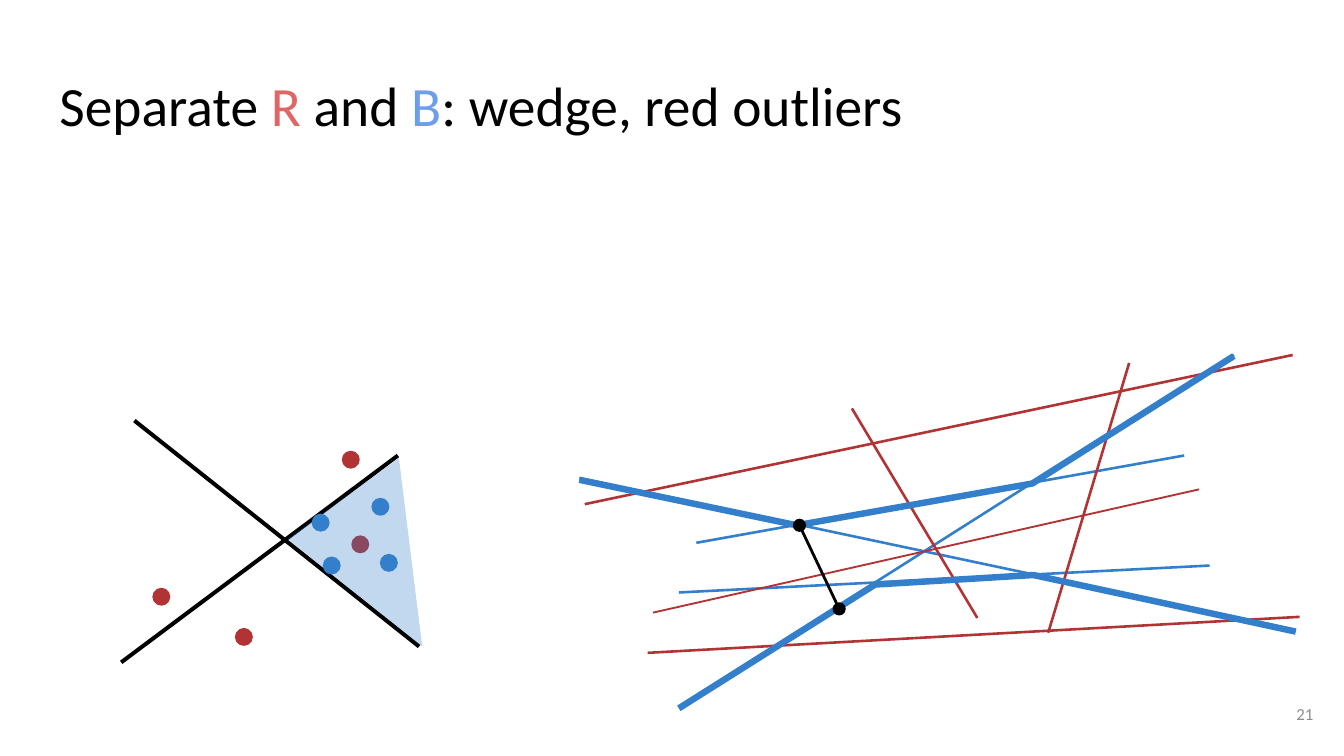
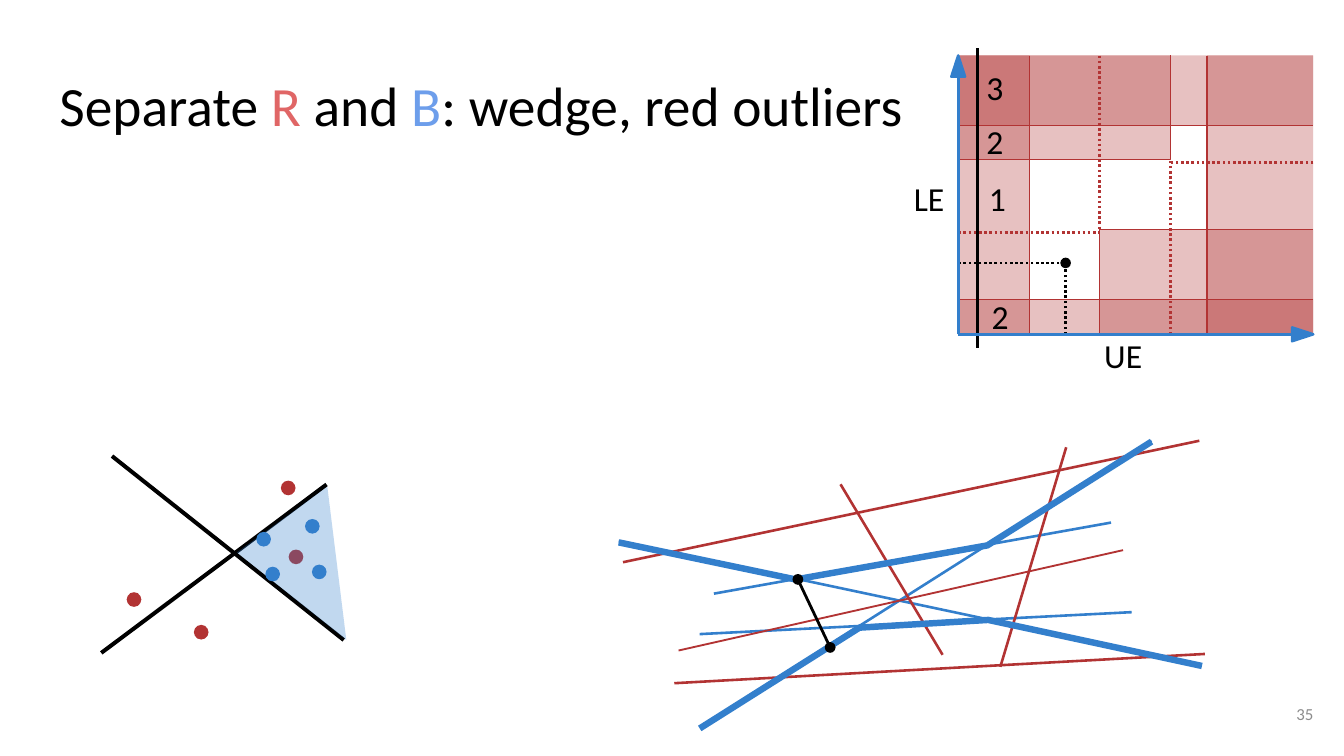
"""Build two slides on separating red and blue points with a wedge."""
from itertools import product

from lxml.etree import SubElement
from pptx import Presentation
from pptx.dml.color import RGBColor
from pptx.enum.dml import MSO_LINE
from pptx.enum.shapes import MSO_CONNECTOR, MSO_SHAPE
from pptx.enum.text import MSO_ANCHOR, MSO_AUTO_SIZE, PP_ALIGN
from pptx.oxml.ns import qn
from pptx.util import Cm, Pt

FONT = "Calibri"
COLORS = {
    "black": "000000",
    "blue": "337FCC",
    "red": "B23333",
    "title red": "E06666",
    "title blue": "6D9EEB",
    "grey": "8C8C8C",
}
RGB = {name: RGBColor.from_string(value) for name, value in COLORS.items()}

TITLE = [
    ("Separate ", "black"),
    ("R", "title red"),
    (" and ", "black"),
    ("B", "title blue"),
    (": wedge, red outliers", "black"),
]

WEDGE_LINES = [
    [(2.54, 7.95), (7.92, 12.22)],
    [(2.29, 12.52), (7.52, 8.61)],
]
WEDGE = [(5.44, 10.19), (7.54, 8.66), (7.98, 12.22)]
POINTS = {
    "blue": [(6.27, 10.69), (7.35, 10.64), (6.06, 9.88), (7.19, 9.58)],
    "red": [(3.05, 11.28), (4.61, 12.04), (6.81, 10.29), (6.63, 8.69)],
}

DUAL_LINES = [
    ("blue", 1.38, [(13.16, 10.26), (22.38, 8.61)]),
    ("blue", 1.38, [(10.95, 9.04), (24.49, 11.91)]),
    ("blue", 1.38, [(23.32, 6.71), (12.83, 13.36)]),
    ("blue", 1.38, [(12.83, 11.2), (22.86, 10.69)]),
    ("red", 1.38, [(11.05, 9.53), (24.43, 6.71)]),
    ("red", 1.38, [(12.24, 12.34), (24.56, 11.66)]),
    ("red", 1.38, [(16.1, 7.72), (18.47, 11.68)]),
    ("red", 1, [(12.34, 11.58), (22.66, 9.25)]),
    ("red", 1.38, [(21.34, 6.86), (19.81, 11.96)]),
    ("blue", 3.46, [(12.83, 13.39), (16.54, 11.05), (19.53, 10.87), (24.49, 11.94)]),
    ("blue", 3.46, [(10.95, 9.07), (15.06, 9.93), (19.51, 9.14), (23.32, 6.73)]),
]
SEGMENT = [(15.11, 9.93), (15.86, 11.51)]

SLIDES = [
    {"number": "21", "scale": 1, "wedge": (0, 0), "dual": (0, 0)},
    {"number": "35", "scale": 0.814, "wedge": (0.05, 2.15), "dual": (2.78, 2.87)},
]


def paint(shape, fill=None, line=None, width=1.38, opacity=100, dotted=False):
    if fill:
        shape.fill.solid()
        shape.fill.fore_color.rgb = RGB[fill]
        if opacity < 100:
            color = shape._element.spPr.find(qn("a:solidFill"))[0]
            SubElement(color, qn("a:alpha"), val=str(opacity * 1000))
    elif hasattr(shape, "fill"):
        shape.fill.background()
    if line:
        shape.line.color.rgb = RGB[line]
        shape.line.width = Pt(width)
        if dotted:
            shape.line.dash_style = MSO_LINE.ROUND_DOT
    else:
        shape.line.fill.background()
    SubElement(shape._element.spPr, qn("a:effectLst"))


def draw_path(slide, points, **style):
    corners = [(Cm(x), Cm(y)) for x, y in points]
    if len(corners) == 2:
        shape = slide.shapes.add_connector(MSO_CONNECTOR.STRAIGHT, *corners[0], *corners[1])
    else:
        builder = slide.shapes.build_freeform(*corners[0])
        builder.add_line_segments(corners[1:], close="fill" in style)
        shape = builder.convert_to_shape()
    paint(shape, **style)


presentation = Presentation()
presentation.slide_width = Cm(25.4)
presentation.slide_height = Cm(14.29)

for settings in SLIDES:
    slide = presentation.slides.add_slide(presentation.slide_layouts[5])
    title = slide.shapes.title
    title.left, title.top, title.width, title.height = Cm(0.87), Cm(1.25), Cm(23.67), Cm(1.59)
    title.text_frame.auto_size = MSO_AUTO_SIZE.NONE
    title.text_frame.vertical_anchor = MSO_ANCHOR.MIDDLE
    paragraph = title.text_frame.paragraphs[0]
    paragraph.alignment = PP_ALIGN.LEFT
    paragraph.line_spacing = 0.9
    for text, color in TITLE:
        run = paragraph.add_run()
        run.text = text
        run.font.name = FONT
        run.font.size = Pt(29.7)
        run.font.color.rgb = RGB[color]

    scale = settings["scale"]
    wedge_x, wedge_y = settings["wedge"]
    dual_x, dual_y = settings["dual"]
    wedge_lines = [[(x * scale + wedge_x, y * scale + wedge_y) for x, y in line] for line in WEDGE_LINES]
    wedge = [(x * scale + wedge_x, y * scale + wedge_y) for x, y in WEDGE]
    segment = [(x * scale + dual_x, y * scale + dual_y) for x, y in SEGMENT]
    dots = [
        (x * scale + wedge_x, y * scale + wedge_y, 0.34 * scale, color)
        for color, points in POINTS.items()
        for x, y in points
    ]
    end_dots = [(x, y, 0.25 * scale, "black") for x, y in segment]
    if settings["number"] == "35":
        end_dots.append((20.14, 4.97, 0.2, "black"))

    for line in wedge_lines:
        draw_path(slide, line, line="black", width=2.16)
    for color, width, points in DUAL_LINES:
        placed = [(x * scale + dual_x, y * scale + dual_y) for x, y in points]
        draw_path(slide, placed, line=color, width=width)
    draw_path(slide, segment, line="black", width=1.5)
    for x, y, size, color in dots + end_dots:
        dot = slide.shapes.add_shape(
            MSO_SHAPE.OVAL, Cm(x - size / 2), Cm(y - size / 2), Cm(size), Cm(size)
        )
        paint(dot, fill=color)
    draw_path(slide, wedge, fill="blue", opacity=30)

    box = slide.shapes.add_textbox(Cm(23.55), Cm(12.95), Cm(1.52), Cm(1.09))
    box.text_frame.word_wrap = True
    box.text_frame.vertical_anchor = MSO_ANCHOR.MIDDLE
    box.text_frame.text = settings["number"]
    paragraph = box.text_frame.paragraphs[0]
    paragraph.alignment = PP_ALIGN.RIGHT
    paragraph.runs[0].font.name = FONT
    paragraph.runs[0].font.size = Pt(9)
    paragraph.runs[0].font.color.rgb = RGB["grey"]

LEFT, RIGHT, TOP, BOTTOM = 18.11, 24.82, 1.05, 6.32
X1, X2, X3, X4 = 19.46, 20.78, 22.12, 22.81
Y1, Y2, Y3, Y4 = 2.37, 3.02, 4.34, 5.66

FORBIDDEN = [
    (LEFT, TOP, X1, BOTTOM),
    (X4, TOP, RIGHT, BOTTOM),
    (LEFT, TOP, RIGHT, Y1),
    (LEFT, Y4, RIGHT, BOTTOM),
    (X2, Y3, RIGHT, BOTTOM),
    (LEFT, TOP, X3, Y2),
]
for left, top, right, bottom in FORBIDDEN:
    region = slide.shapes.add_shape(
        MSO_SHAPE.RECTANGLE, Cm(left), Cm(top), Cm(right - left), Cm(bottom - top)
    )
    paint(region, fill="red", opacity=30)

BORDERS = [
    [(X1, TOP), (X1, BOTTOM)],
    [(X4, TOP), (X4, BOTTOM)],
    [(LEFT, Y1), (RIGHT, Y1)],
    [(LEFT, Y4), (RIGHT, Y4)],
    [(X2, BOTTOM), (X2, Y3), (RIGHT, Y3)],
    [(X3, TOP), (X3, Y2), (LEFT, Y2)],
]
for points in BORDERS:
    draw_path(slide, points, line="red", width=0.69)

EXTENSIONS = [
    ("red", [(RIGHT, 3.07), (X3, 3.07)]),
    ("red", [(X3, BOTTOM), (X3, Y2)]),
    ("red", [(X2, TOP), (X2, Y3)]),
    ("red", [(LEFT, 4.39), (X2, 4.39)]),
    ("black", [(20.14, BOTTOM), (20.14, 4.97), (LEFT, 4.97)]),
]
for color, points in EXTENSIONS:
    draw_path(slide, points, line=color, dotted=True)

draw_path(slide, [(18.47, 0.91), (18.47, 6.58)], line="black", width=1.5)
for end in [(RIGHT, BOTTOM), (LEFT, TOP)]:
    draw_path(slide, [(LEFT, BOTTOM), end], line="blue")
ARROWHEADS = [
    [(RIGHT, BOTTOM), (RIGHT - 0.4, BOTTOM - 0.13), (RIGHT - 0.4, BOTTOM + 0.13)],
    [(LEFT, TOP), (LEFT - 0.13, TOP + 0.4), (LEFT + 0.13, TOP + 0.4)],
]
for points in ARROWHEADS:
    draw_path(slide, points, fill="blue", line="blue")

LABELS = [
    ("3", 18.39, 1.14, 0.76),
    ("2", 18.39, 2.16, 0.76),
    ("1", 18.44, 3.23, 0.76),
    ("2", 18.49, 5.46, 0.76),
    ("UE", 20.62, 6.2, 2.82),
    ("LE", 17.02, 3.23, 2.82),
]
for text, left, top, width in LABELS:
    box = slide.shapes.add_textbox(Cm(left), Cm(top), Cm(width), Cm(1.02))
    box.text_frame.word_wrap = True
    box.text_frame.text = text
    font = box.text_frame.paragraphs[0].runs[0].font
    font.name = FONT
    font.size = Pt(18)
    font.color.rgb = RGB["black"]

presentation.save("out.pptx")
